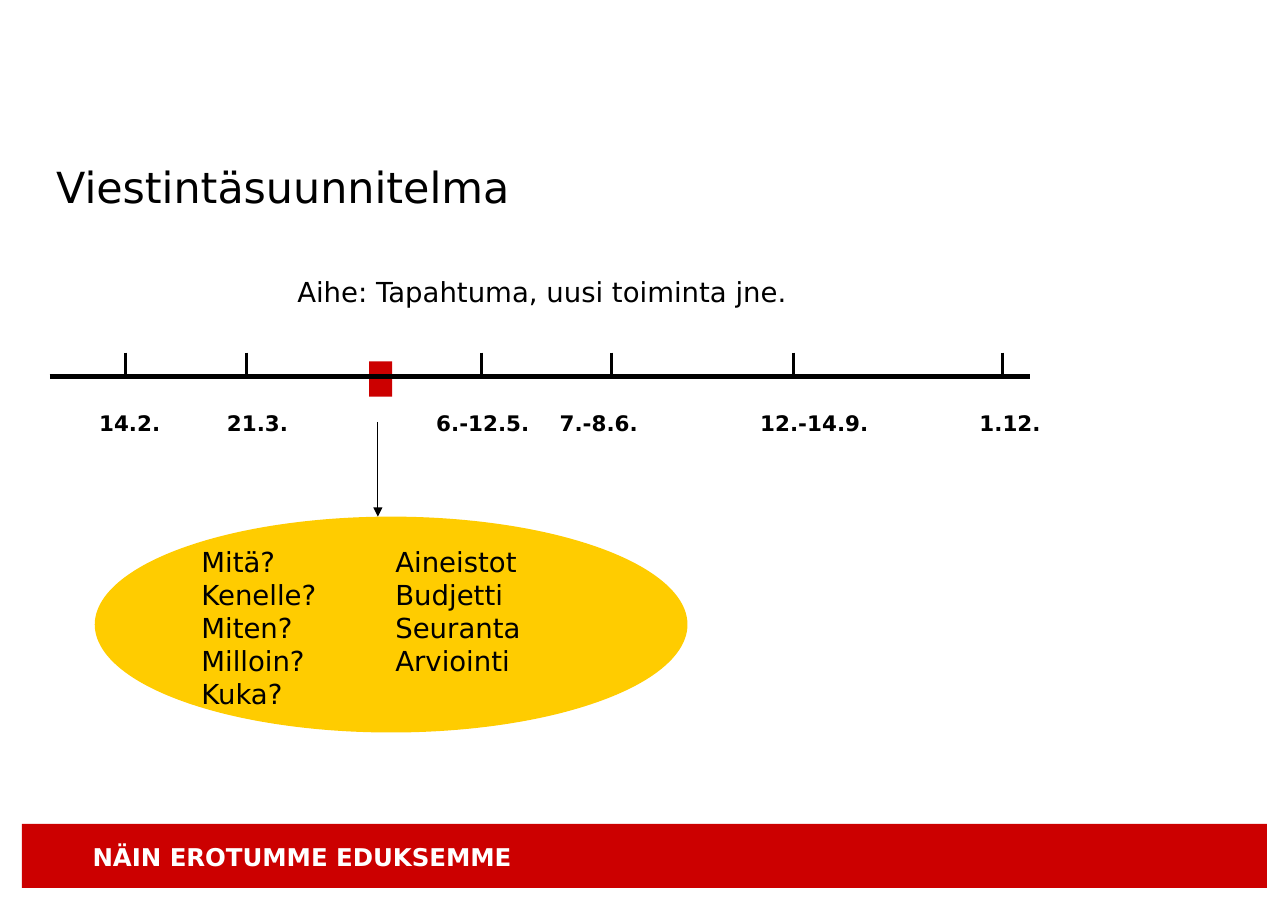
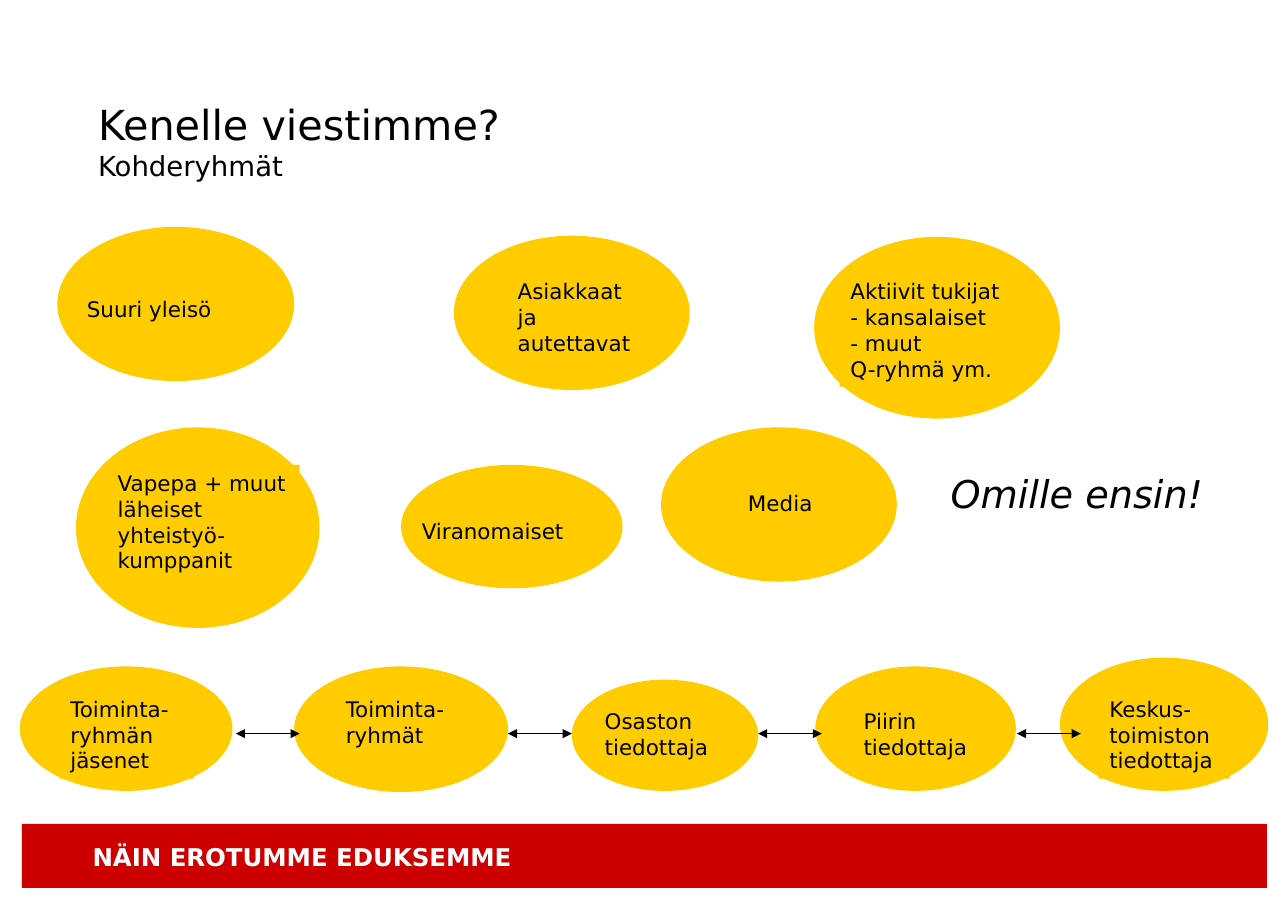
import pptx
import pptx.util
import pptx.dml.color
import pptx.enum.shapes
import pptx.enum.text
import pptx.oxml.ns
import lxml.etree

EMU_PER_PX = 9144  # 100 px to the inch
SLIDE_W, SLIDE_H = 1169, 827
FONT = "DejaVu Sans"
RED, YELLOW, BLACK, WHITE = "CC0000", "FFCC00", "000000", "FFFFFF"
SHAPE = pptx.enum.shapes.MSO_SHAPE
ANCHOR = pptx.enum.text.MSO_ANCHOR
INSETS = (10, 5)
WIDE_INSETS = (11, 6)


def px(n):
    return pptx.util.Emu(n * EMU_PER_PX)


def rgb(color):
    return pptx.dml.color.RGBColor.from_string(color)


def place(sp, box):
    sp.left, sp.top, sp.width, sp.height = [px(n) for n in box]


def write(sp, lines, size, color=BLACK, bold=False, italic=False,
          insets=INSETS, wrap=True, anchor=ANCHOR.TOP):
    """Fill a shape with left-aligned paragraphs of one style."""
    tf = sp.text_frame
    tf.auto_size = pptx.enum.text.MSO_AUTO_SIZE.NONE
    tf.word_wrap = wrap
    tf.vertical_anchor = anchor
    tf.margin_left = tf.margin_right = px(insets[0])
    tf.margin_top = tf.margin_bottom = px(insets[1])
    tf.text = "\n".join(lines)
    for p in tf.paragraphs:
        p.alignment = pptx.enum.text.PP_ALIGN.LEFT
        p.font.name = FONT
        p.font.size = pptx.util.Pt(size)
        p.font.bold = bold
        p.font.italic = italic
        p.font.color.rgb = rgb(color)


def add_text(s, box, lines, size, **style):
    sp = s.shapes.add_textbox(*[px(n) for n in box])
    write(sp, lines, size, **style)


def add_block(s, kind, box, color):
    sp = s.shapes.add_shape(kind, *[px(n) for n in box])
    sp.shadow.inherit = False
    sp.fill.solid()
    sp.fill.fore_color.rgb = rgb(color)
    sp.line.fill.background()
    return sp


def add_line(s, start, end, width, ends=()):
    """Draw a black line; ends names the arrowheads, headEnd or tailEnd."""
    cn = s.shapes.add_connector(pptx.enum.shapes.MSO_CONNECTOR.STRAIGHT,
                                *[px(n) for n in (*start, *end)])
    cn.line.color.rgb = rgb(BLACK)
    cn.line.width = pptx.util.Pt(width)
    spPr = cn._element.spPr
    qn = pptx.oxml.ns.qn
    for name in ends:
        lxml.etree.SubElement(spPr.find(qn("a:ln")), qn("a:" + name),
                              type="triangle")
    lxml.etree.SubElement(spPr, qn("a:effectLst"))


def new_slide(prs, title_box, title_lines, size, **style):
    """Start a slide with its title and the shared footer band."""
    s = prs.slides.add_slide(prs.slide_layouts[5])
    place(s.shapes.title, title_box)
    write(s.shapes.title, title_lines, size, **style)
    add_block(s, SHAPE.RECTANGLE, (20, 748, 1130, 58), RED)
    add_text(s, (73, 758, 411, 38), ["NÄIN EROTUMME EDUKSEMME"], 16,
             color=WHITE, bold=True, insets=WIDE_INSETS, wrap=False)
    return s


def add_timeline(s, box):
    """Axis with ticks, dates below and a red marker."""
    left, top, width, height = box
    axis_y = top + 22
    add_block(s, SHAPE.RECTANGLE, (left + 290, top + 8, 21, 32), RED)
    add_line(s, (left, axis_y), (left + width, axis_y), 3)
    dates = [  # tick, text start, date
        (69, 45, "14.2."), (179, 161, "21.3."), (392, 351, "6.-12.5."),
        (510, 463, "7.-8.6."), (675, 645, "12.-14.9."), (865, 844, "1.12."),
    ]
    for tick, start, date in dates:
        add_line(s, (left + tick, top), (left + tick, top + 20), 2.25)
        add_text(s, (left + start, top + height - 23, 110, 23), [date], 14,
                 bold=True, insets=(0, 0), wrap=False)


def add_questions(s, box):
    """Ellipse with two columns of planning points and an arrow into it."""
    left, top, width, height = box
    add_block(s, SHAPE.OVAL, box, YELLOW)
    add_line(s, (left + 257, top - 86), (left + 257, top), 0.75, ["tailEnd"])
    columns = [
        (87, 146, ["Mitä?", "Kenelle?", "Miten?", "Milloin?", "Kuka?"]),
        (263, 203, ["Aineistot", "Budjetti", "Seuranta", "Arviointi"]),
    ]
    for x, w, lines in columns:
        add_text(s, (left + x, top + 21, w, 160), lines, 18)


def add_bubble(s, box, label, lines):
    """Ellipse with a label; the label box is relative to the ellipse."""
    left, top, width, height = box
    dx, dy, w, h = label
    add_block(s, SHAPE.OVAL, box, YELLOW)
    sp = add_block(s, SHAPE.RECTANGLE, (left + dx, top + dy, w, h), YELLOW)
    write(sp, lines, 14)


def add_bubbles(s, left, top, bubbles):
    for (x, y, w, h), label, lines in bubbles:
        add_bubble(s, (left + x, top + y, w, h), label, lines)


def add_audiences(s, left, top):
    """Outside target groups."""
    add_bubbles(s, left, top, [
        ((0, 0, 215, 140), (17, 58, 177, 33), ["Suuri yleisö"]),
        ((360, 8, 214, 140), (48, 34, 131, 80), ["Asiakkaat ja autettavat"]),
        ((687, 9, 223, 165), (23, 33, 161, 103),
         ["Aktiivit tukijat", "- kansalaiset", "- muut", "Q-ryhmä ym."]),
        ((17, 182, 221, 182), (28, 34, 175, 98),
         ["Vapepa + muut", "läheiset", "yhteistyö-", "kumppanit"]),
        ((312, 216, 201, 112), (9, 43, 175, 32), ["Viranomaiset"]),
        ((548, 182, 214, 140), (69, 52, 92, 33), ["Media"]),
    ])


def add_chain(s, left, top):
    """Own organisation, linked by two-way arrows."""
    add_bubbles(s, left, top, [
        ((0, 8, 193, 113), (36, 22, 122, 80), ["Toiminta-ryhmän", "jäsenet"]),
        ((249, 8, 194, 114), (37, 22, 120, 80), ["Toiminta-", "ryhmät"]),
        ((501, 20, 169, 101), (20, 21, 130, 57), ["Osaston tiedottaja"]),
        ((722, 8, 182, 113), (34, 33, 123, 57), ["Piirin", "tiedottaja"]),
        ((944, 0, 189, 121), (35, 30, 119, 80),
         ["Keskus-", "toimiston", "tiedottaja"]),
    ])
    y = top + 69
    for x in (196, 443, 670, 905):
        add_line(s, (left + x, y), (left + x + 58, y), 1,
                 ["headEnd", "tailEnd"])


def build_plan_slide(prs):
    s = new_slide(prs, (51, 115, 835, 109), ["Viestintäsuunnitelma"], 28,
                  insets=(0, 0), anchor=ANCHOR.MIDDLE)
    add_text(s, (260, 245, 700, 40),
             ["Aihe: Tapahtuma, uusi toiminta jne."], 18)
    add_timeline(s, (45, 320, 890, 75))
    add_questions(s, (86, 469, 538, 196))


def build_audience_slide(prs):
    s = new_slide(prs, (78, 84, 404, 85),
                  ["Kenelle viestimme?", "Kohderyhmät"], 27,
                  insets=WIDE_INSETS, wrap=False)
    subtitle = s.shapes.title.text_frame.paragraphs[1]
    subtitle.font.size = pptx.util.Pt(18)
    add_audiences(s, 52, 206)
    add_text(s, (853, 422, 254, 52), ["Omille ensin!"], 25, italic=True)
    add_chain(s, 18, 597)


def main():
    prs = pptx.Presentation()
    prs.slide_width, prs.slide_height = px(SLIDE_W), px(SLIDE_H)
    build_plan_slide(prs)
    build_audience_slide(prs)
    prs.save("out.pptx")


if __name__ == "__main__":
    main()
